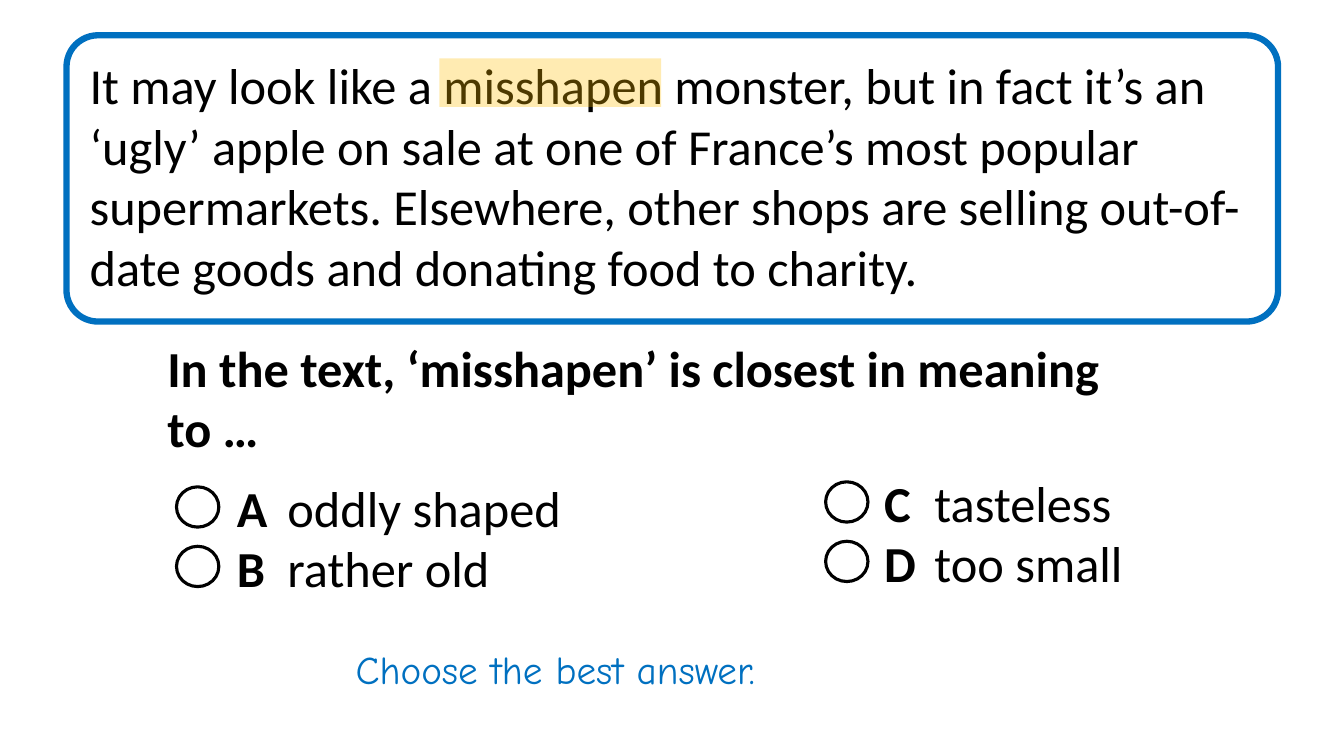
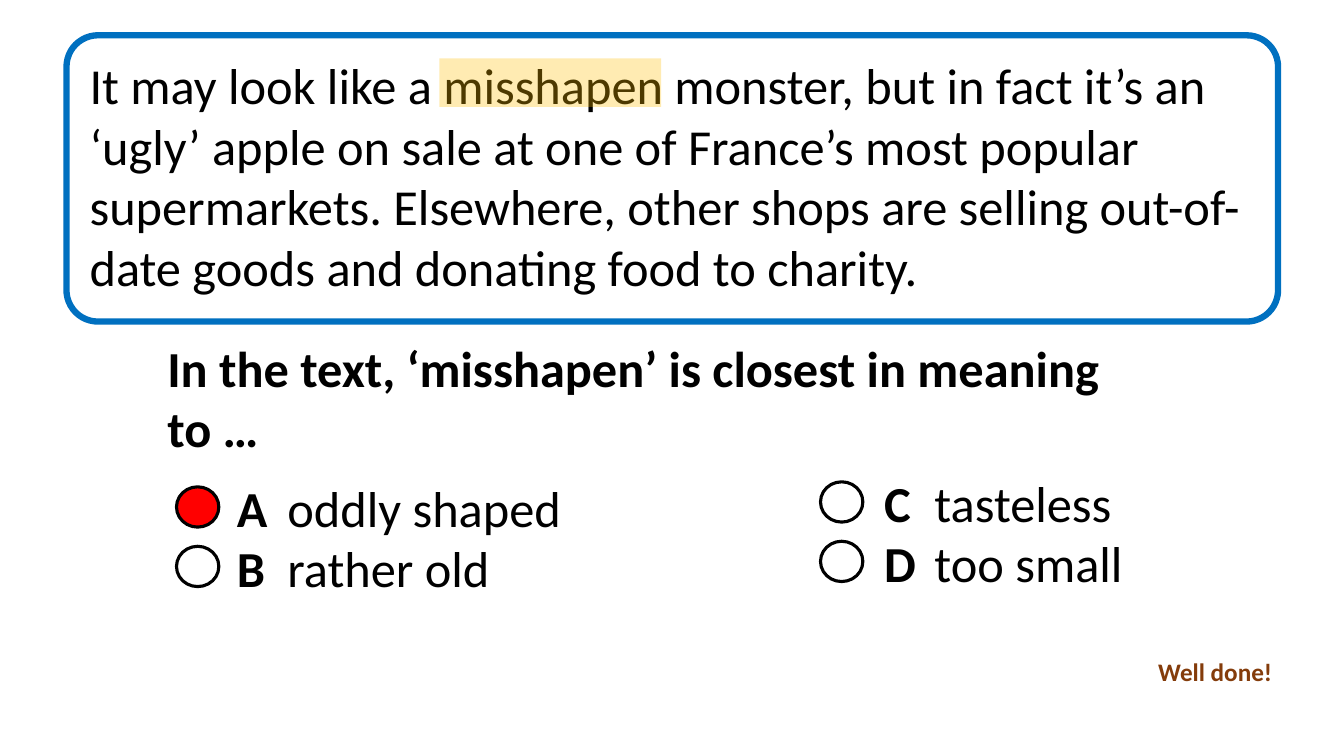
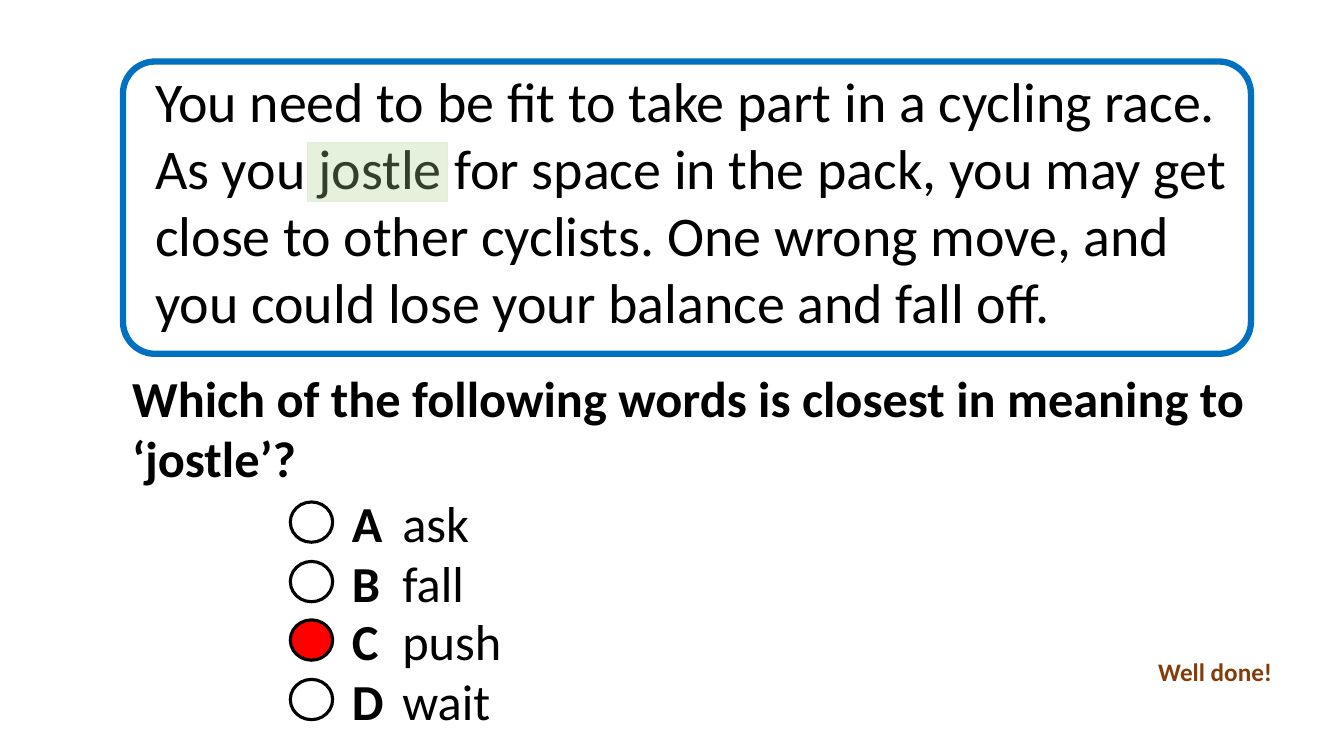
from lxml import etree
from pptx import Presentation
from pptx.dml.color import RGBColor
from pptx.enum.shapes import MSO_SHAPE
from pptx.enum.text import MSO_ANCHOR, MSO_AUTO_SIZE, PP_ALIGN
from pptx.oxml.ns import qn
from pptx.util import Inches, Pt

ROUND, OVAL, RECT = MSO_SHAPE.ROUNDED_RECTANGLE, MSO_SHAPE.OVAL, MSO_SHAPE.RECTANGLE
TOP, LEFT, FIXED = MSO_ANCHOR.TOP, PP_ALIGN.LEFT, MSO_AUTO_SIZE.NONE

BLACK = RGBColor(0x00, 0x00, 0x00)
WHITE = RGBColor(0xFF, 0xFF, 0xFF)
BLUE = RGBColor(0x00, 0x70, 0xC0)
RED = RGBColor(0xFF, 0x00, 0x00)
BROWN = RGBColor(0x84, 0x3C, 0x0B)
GOLD = RGBColor(0xFF, 0xC0, 0x00)
GREEN = RGBColor(0xA9, 0xD1, 0x8E)
PALE = RGBColor(0xE2, 0xF0, 0xD9)

WIDE, HIGH = Inches(13.333), Inches(7.5)
TWO_LISTS = 3  # layout with a title and two lists

# Boxes are left, top, width, height in percent of the slide
PRAISE_BOX = (85.43, 86.13, 12.83, 5.33)
HINT_BOX = (25.73, 84.67, 56.63, 7.6)
DOT_W, DOT_H = 3.15, 5.33
DOT_TOP, DOT_STEP = 2, 7.87

APPLE = {
    "box": (4.95, 4.67, 90.15, 37.87),
    "inner": (0.98, 1.86, 90.15, 33.6),
    "mark": (27.75, 3.06, 16.5, 6.4),
    "tint": GOLD, "edge": None, "size": 36,
    "text": "It may look like a misshapen monster, but in fact it’s an "
            "‘ugly’ apple on sale at one of France’s most popular "
            "supermarkets. Elsewhere, other shops are selling out-of-date "
            "goods and donating food to charity.",
}
RACE = {
    "box": (9.15, 8.13, 83.93, 38.67),
    "inner": (1.65, 0, 82.28, 37.2),
    "mark": (13.73, 10.8, 10.43, 7.73),
    "tint": GREEN, "edge": PALE, "size": 40,
    "text": "You need to be fit to take part in a cycling race. As you "
            "jostle for space in the pack, you may get close to other "
            "cyclists. One wrong move, and you could lose your balance "
            "and fall off.",
}
SHAPED = ("In the text, ‘misshapen’ is closest in meaning to …",
          (11.7, 43.87, 72.75, 17.47))
JOSTLE = ("Which of the following words is closest in meaning to ‘jostle’?",
          (9.08, 47.87, 90.9, 17.47))
AB_BOX, CD_BOX = (16.88, 62.4, 29.3, 17.47), (65.03, 61.73, 30.4, 17.47)
UPPER, LOWER = (25.43, 64.4, 30.4, 17.47), (25.43, 80, 30.4, 17.47)
AB = (("A", "oddly shaped"), ("B", "rather old"))
CD = (("C", "tasteless"), ("D", "too small"))
ASK = (("A", "ask"), ("B", "fall"))
PUSH = (("C", "push"), ("D", "wait"))


def place(box):
    left, top, width, height = box
    return [int(WIDE * left / 100), int(HIGH * top / 100),
            int(WIDE * width / 100), int(HIGH * height / 100)]


def within(box, part):
    return (box[0] + part[0], box[1] + part[1], part[2], part[3])


def write(frame, paras, size=36, color=BLACK, bold=False, font="Calibri", tab=None):
    """Each paragraph is a tuple of runs; bold applies to the first."""
    frame.word_wrap = True
    frame.auto_size = FIXED
    frame.vertical_anchor = TOP
    for i, parts in enumerate(paras):
        para = frame.add_paragraph() if i else frame.paragraphs[0]
        para.alignment = LEFT
        if tab:
            props = para._p.get_or_add_pPr()
            props.set("marL", "0")
            props.set("indent", "0")
            etree.SubElement(props, qn("a:buNone"))
            stops = etree.SubElement(props, qn("a:tabLst"))
            etree.SubElement(stops, qn("a:tab"), pos=str(Inches(tab)), algn="l")
        para.space_before = Pt(0)
        for j, text in enumerate(parts):
            run = para.add_run()
            run.text = text
            run.font.size = Pt(size)
            run.font.name = font
            run.font.bold = bold and j == 0
            run.font.color.rgb = color


def label(slide, box, text, **form):
    write(slide.shapes.add_textbox(*place(box)).text_frame, [(text,)], **form)


def draw(slide, kind, box, fill=None, line=None, width=1, alpha=None):
    shape = slide.shapes.add_shape(kind, *place(box))
    shape.shadow.inherit = False
    if fill is None:
        shape.fill.background()
    else:
        shape.fill.solid()
        shape.fill.fore_color.rgb = fill
    if alpha:
        tone = shape.fill._xPr.find(".//" + qn("a:srgbClr"))
        etree.SubElement(tone, qn("a:alpha"), val=str(alpha * 1000))
    if line is None:
        shape.line.fill.background()
    else:
        shape.line.color.rgb = line
        shape.line.width = Pt(width)
    return shape


def fill_holder(holder, box, paras, **form):
    holder.left, holder.top, holder.width, holder.height = place(box)
    write(holder.text_frame, paras, **form)


def passage(slide, story):
    box = story["box"]
    frame = draw(slide, ROUND, box, line=BLUE, width=4.5)
    frame.adjustments[0] = 0.11
    label(slide, within(box, story["inner"]), story["text"], size=story["size"])
    draw(slide, RECT, within(box, story["mark"]), story["tint"], story["edge"], alpha=30)


def choices(slide, holder, box, items, gap, tab, answer):
    paras = [(letter, "\t" + word) for letter, word in items]
    fill_holder(holder, box, paras, bold=True, tab=tab)
    for row, (letter, word) in enumerate(items):
        spot = within(box, (-gap, DOT_TOP + row * DOT_STEP, DOT_W, DOT_H))
        draw(slide, OVAL, spot, RED if letter == answer else WHITE, BLACK, 2.25)


def quiz(deck, story, ask, lists, tab, answer=None):
    slide = deck.slides.add_slide(deck.slide_layouts[TWO_LISTS])
    text, box = ask
    passage(slide, story)
    fill_holder(slide.shapes.title, box, [(text,)], bold=True)
    for idx, (area, items, gap) in enumerate(lists, 1):
        choices(slide, slide.placeholders[idx], area, items, gap, tab, answer)
    # Closing line: praise once the answer shows
    if answer:
        label(slide, PRAISE_BOX, "Well done!", size=18, color=BROWN, bold=True)
    else:
        label(slide, HINT_BOX, "Choose the best answer.", size=28, color=BLUE,
              font="Comic Neue")


def main():
    deck = Presentation()
    deck.slide_width, deck.slide_height = WIDE, HIGH
    quiz(deck, APPLE, SHAPED, [(AB_BOX, AB, 3.75), (CD_BOX, CD, 3.6)], 0.53)
    quiz(deck, APPLE, SHAPED, [(AB_BOX, AB, 3.75), (CD_BOX, CD, 3.98)], 0.53, "A")
    quiz(deck, RACE, JOSTLE, [(UPPER, ASK, 3.83), (LOWER, PUSH, 3.83)], 0.62, "C")
    deck.save("out.pptx")


if __name__ == "__main__":
    main()
